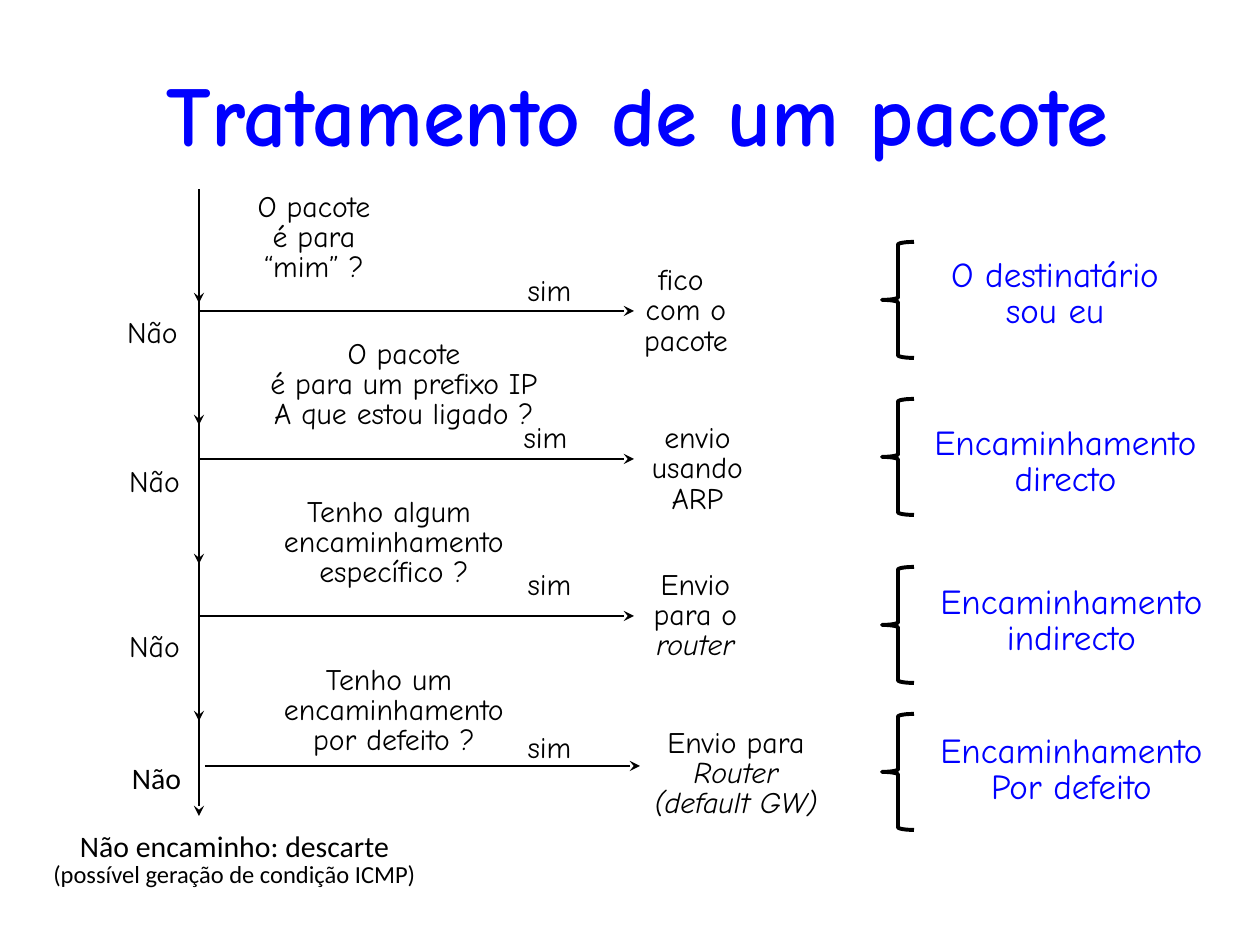
from lxml import etree
from pptx import Presentation
from pptx import util as u
from pptx.dml.color import RGBColor
from pptx.enum import shapes, text
from pptx.oxml.ns import qn

BLACK = RGBColor(0x00, 0x00, 0x00)
BLUE = RGBColor(0x00, 0x00, 0xFF)
HAND = "Comic Neue"
PLAIN = "Calibri"
SCALE = 914400 / 126
TRUNK_X = 199
ARROW_LENGTH = 435
DROP_LENGTH = 105


def px(value):
    return u.Emu(round(value * SCALE))


class Flow:
    def __init__(self):
        self.deck = Presentation()
        self.deck.slide_width = px(1260)
        self.deck.slide_height = px(945)
        self.page = self.deck.slides.add_slide(self.deck.slide_layouts[5])

    def style(self, para, size, font, color, bold=False, italic=False):
        para.alignment = text.PP_ALIGN.CENTER
        for span in para.runs:
            span.font.size = u.Pt(size)
            span.font.name = font
            span.font.color.rgb = color
            span.font.bold = bold
            span.font.italic = italic

    def title(self, words, left, top, width, height):
        box = self.page.shapes.title
        box.left, box.top, box.width, box.height = map(px, (left, top, width, height))
        frame = box.text_frame
        frame.text = words
        frame.auto_size = text.MSO_AUTO_SIZE.NONE
        frame.vertical_anchor = text.MSO_ANCHOR.MIDDLE
        self.style(frame.paragraphs[0], 48.6, HAND, BLUE, bold=True)

    def label(self, words, left, top, width, height, sizes=(17,), font=HAND,
              color=BLACK, wrap=False, italic_lines=()):
        box = self.page.shapes.add_textbox(px(left), px(top), px(width), px(height))
        frame = box.text_frame
        frame.text = words
        frame.word_wrap = wrap
        frame.auto_size = text.MSO_AUTO_SIZE.SHAPE_TO_FIT_TEXT
        frame.margin_left = frame.margin_right = px(9)
        frame.margin_top = frame.margin_bottom = px(4)
        for index, para in enumerate(frame.paragraphs):
            para.line_spacing = 0.85
            size = sizes[min(index, len(sizes) - 1)]
            self.style(para, size, font, color, italic=index in italic_lines)

    def arrow(self, x1, y1, x2, y2):
        line = self.page.shapes.add_connector(
            shapes.MSO_CONNECTOR.STRAIGHT, px(x1), px(y1), px(x2), px(y2))
        line.line.color.rgb = BLACK
        line.line.width = u.Pt(1)
        etree.SubElement(line.line._get_or_add_ln(), qn("a:tailEnd"), type="stealth")
        etree.SubElement(line._element.spPr, qn("a:effectLst"))

    def brace(self, left, top, width, height):
        shape = self.page.shapes.add_shape(
            shapes.MSO_SHAPE.LEFT_BRACE, px(left), px(top), px(width), px(height))
        shape.shadow.inherit = False
        shape.fill.background()
        shape.line.color.rgb = BLACK
        shape.line.width = u.Pt(2.25)


QUESTIONS = [
    ("O pacote\né para\n“mim” ?", 242, 189, 144, False),
    ("O pacote\né para um prefixo IP\nA que estou ligado ?", 236, 336, 336, True),
    ("Tenho algum \nencaminhamento\nespecífico ?", 226, 494, 336, True),
    ("Tenho um \nencaminhamento\npor defeito ?", 226, 662, 336, True),
]
YES_ARROWS = [(TRUNK_X, 311), (TRUNK_X, 459), (TRUNK_X, 616), (205, 766)]
YES_LABELS = [(518, 273), (514, 420), (518, 567), (518, 730)]
NO_LABELS = [(116, 315, HAND), (118, 464, HAND), (118, 629, HAND), (120, 761, PLAIN)]
DROPS = [198, 320, 459, 616]
OUTCOMES = [
    ("fico \ncom o\npacote", 630, 262, 112, ()),
    ("envio\nusando\nARP", 641, 420, 113, ()),
    ("Envio\npara o\nrouter", 638, 567, 115, (2,)),
    ("Envio para\nRouter\n(default GW)", 630, 725, 212, (1, 2)),
]
BRACES = [242, 399, 567, 714]
CASES = [
    ("O destinatário\nsou eu", 927, 255, 256),
    ("Encaminhamento\ndirecto", 921, 423, 289),
    ("Encaminhamento\nindirecto", 927, 582, 289),
    ("Encaminhamento\nPor defeito", 927, 731, 289),
]


def main():
    flow = Flow()
    flow.title("Tratamento de um pacote", 37, 39, 1201, 147)
    flow.arrow(TRUNK_X, 189, TRUNK_X, 816)
    for y in DROPS:
        flow.arrow(TRUNK_X, y, TRUNK_X, y + DROP_LENGTH)
    for x, y in YES_ARROWS:
        flow.arrow(x, y, x + ARROW_LENGTH, y)
    for x, y in YES_LABELS:
        flow.label("sim", x, y, 63, 38)
    for x, y, font in NO_LABELS:
        flow.label("Não", x, y, 73, 38, font=font)
    for words, x, y, width, wrap in QUESTIONS:
        flow.label(words, x, y, width, 100, wrap=wrap)
    for words, x, y, width, italic_lines in OUTCOMES:
        flow.label(words, x, y, width, 100, italic_lines=italic_lines)
    for y in BRACES:
        flow.brace(882, y, 32, 116)
    for words, x, y, width in CASES:
        flow.label(words, x, y, width, 79, sizes=(20,), color=BLUE)
    flow.label("Não encaminho: descarte\n(possível geração de condição ICMP)",
               36, 829, 397, 63, sizes=(17, 14), font=PLAIN)
    flow.deck.save("out.pptx")


if __name__ == "__main__":
    main()
